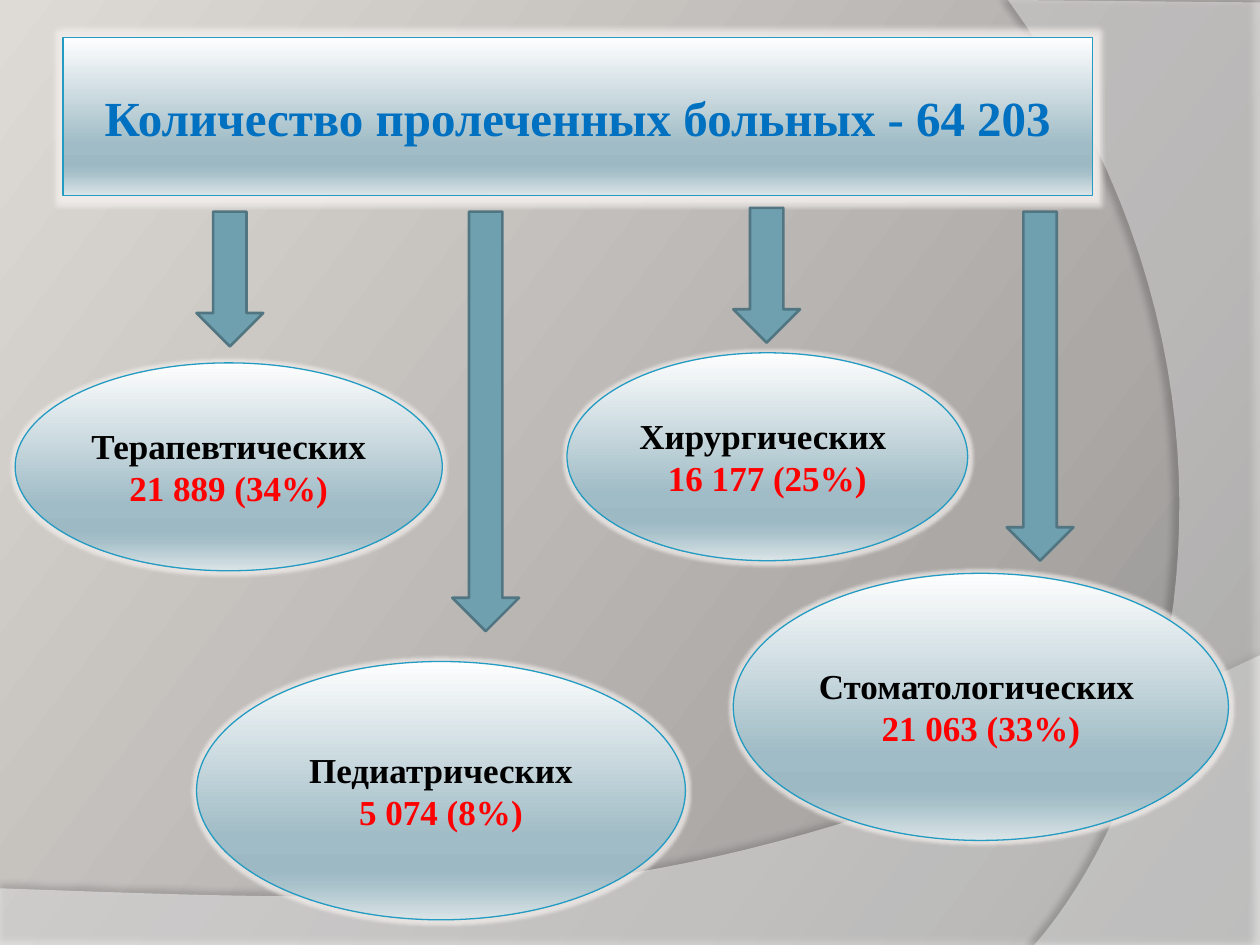
import lxml.etree
import pptx
import pptx.dml.color
import pptx.enum.shapes
import pptx.enum.text
import pptx.oxml.ns
import pptx.util

Inches, Pt = pptx.util.Inches, pptx.util.Pt
MSO = pptx.enum.shapes.MSO_SHAPE
qn = pptx.oxml.ns.qn
PANEL_STOPS = [(0, "FEFEFE"), (68, "A0BCC6"), (81, "9CB9C4"), (86, "A7C0C9"), (100, "DAE4E7")]


def rgb(value):
    return pptx.dml.color.RGBColor.from_string(value)


def add_text(tf, text, size=20, color="000000", first=True):
    p = tf.paragraphs[0] if first else tf.add_paragraph()
    p.alignment = pptx.enum.text.PP_ALIGN.CENTER
    r = p.add_run()
    r.text = text
    r.font.name, r.font.size, r.font.bold = "Times New Roman", Pt(size), True
    r.font.color.rgb = rgb(color)


def set_gradient(fill, element, stops, angle):
    fill.gradient()
    grad = next(element.iter(qn("a:gradFill")))
    for child in list(grad):
        grad.remove(child)
    gs_list = lxml.etree.SubElement(grad, qn("a:gsLst"))
    for pos, color in stops:
        gs = lxml.etree.SubElement(gs_list, qn("a:gs"), pos=str(pos * 1000))
        lxml.etree.SubElement(gs, qn("a:srgbClr"), val=color)
    lxml.etree.SubElement(grad, qn("a:lin"), ang=str(angle * 60000), scaled="0")


prs = pptx.Presentation()
prs.slide_width, prs.slide_height = Inches(10), Inches(7.5)
s = prs.slides.add_slide(prs.slide_layouts[6])

# Background
set_gradient(s.background.fill, s.element, [(0, "8F8D8B"), (30, "ABA8A6"), (100, "DEDBD7")], 217)

# Translucent waves: straight corners, Bezier edge, opacity %, shadow opacity %, distance, direction
waves = [
    ([(0, 7.05), (0, 7.51), (10, 7.51)],
     [(10, 5.2), (5.59, 7.29), (3.91, 7.19), (0, 7.05)], 45, 35, 3.5, 270),
    ([(10, 0.02), (10, 7.5)],
     [(8.21, 7.5), (9.35, 6.19), (10.18, 3), (8, 0)], 40, 45, 4, 180),
]
for corners, curve, opacity, shade, distance, direction in waves:
    points = list(corners)
    for i in range(41):
        t = i / 40
        weights = ((1 - t) ** 3, 3 * t * (1 - t) ** 2, 3 * t * t * (1 - t), t ** 3)
        points.append(tuple(sum(w * pt[axis] for w, pt in zip(weights, curve)) for axis in (0, 1)))
    points = [(Inches(x), Inches(y)) for x, y in points]
    builder = s.shapes.build_freeform(*points[0])
    builder.add_line_segments(points[1:], close=True)
    sp = builder.convert_to_shape()
    sp.fill.solid()
    sp.fill.fore_color.rgb = rgb("FFFFFF")
    color = next(sp.element.spPr.iter(qn("a:srgbClr")))
    lxml.etree.SubElement(color, qn("a:alpha"), val=str(opacity * 1000))
    sp.line.fill.background()
    sp.shadow.inherit = False
    effects = sp.element.spPr.find(qn("a:effectLst"))
    shadow = lxml.etree.SubElement(effects, qn("a:outerShdw"), blurRad=str(Pt(4)),
                                   dist=str(Pt(distance)), dir=str(direction * 60000))
    color = lxml.etree.SubElement(shadow, qn("a:srgbClr"), val="000000")
    lxml.etree.SubElement(color, qn("a:alpha"), val=str(shade * 1000))

# Title panel and patient groups: shape, box, lines of (text, size, colour)
panels = [(MSO.RECTANGLE, (0.5, 0.3, 8.17, 1.25),
           [("Количество пролеченных больных - 64 203", 28, "0070C0")])]
groups = [
    ("Терапевтических ", "21 889 (34%)", (0.12, 2.88, 3.39, 1.65)),
    ("Хирургических ", "16 177 (25%)", (4.5, 2.8, 3.18, 1.65)),
    ("Педиатрических", "5 074 (8%)", (1.56, 5.25, 3.88, 2.05)),
    ("Стоматологических ", "21 063 (33%)", (5.82, 4.55, 3.93, 2.12)),
]
for name, count, box in groups:
    panels.append((MSO.OVAL, box, [(name, 20, "000000"), (count, 20, "FF0000")]))

for kind, box, lines in panels:
    sp = s.shapes.add_shape(kind, *map(Inches, box))
    set_gradient(sp.fill, sp.element, PANEL_STOPS, 90)
    sp.line.color.rgb = rgb("239BC2")
    sp.line.width = Pt(0.75)
    sp.shadow.inherit = False
    effects = sp.element.spPr.find(qn("a:effectLst"))
    glow = lxml.etree.SubElement(effects, qn("a:glow"), rad=str(Pt(4)))
    color = lxml.etree.SubElement(glow, qn("a:srgbClr"), val="F4EFEC")
    lxml.etree.SubElement(color, qn("a:alpha"), val="70000")
    tf = sp.text_frame
    tf.word_wrap = True
    tf.vertical_anchor = pptx.enum.text.MSO_ANCHOR.MIDDLE
    if kind == MSO.RECTANGLE:
        tf.margin_left = tf.margin_right = Inches(0.05)
    for i, (text, size, color) in enumerate(lines):
        add_text(tf, text, size=size, color=color, first=i == 0)

# Arrows from the title to the groups
for left, top, height in [(3.59, 1.68, 3.33), (1.56, 1.68, 1.07), (5.82, 1.65, 1.07), (7.99, 1.68, 2.77)]:
    sp = s.shapes.add_shape(MSO.DOWN_ARROW, Inches(left), Inches(top), Inches(0.53), Inches(height))
    sp.fill.solid()
    sp.fill.fore_color.rgb = rgb("6EA0B0")
    sp.line.color.rgb = rgb("517682")
    sp.line.width = Pt(1.5)
    sp.shadow.inherit = False

prs.save("out.pptx")
